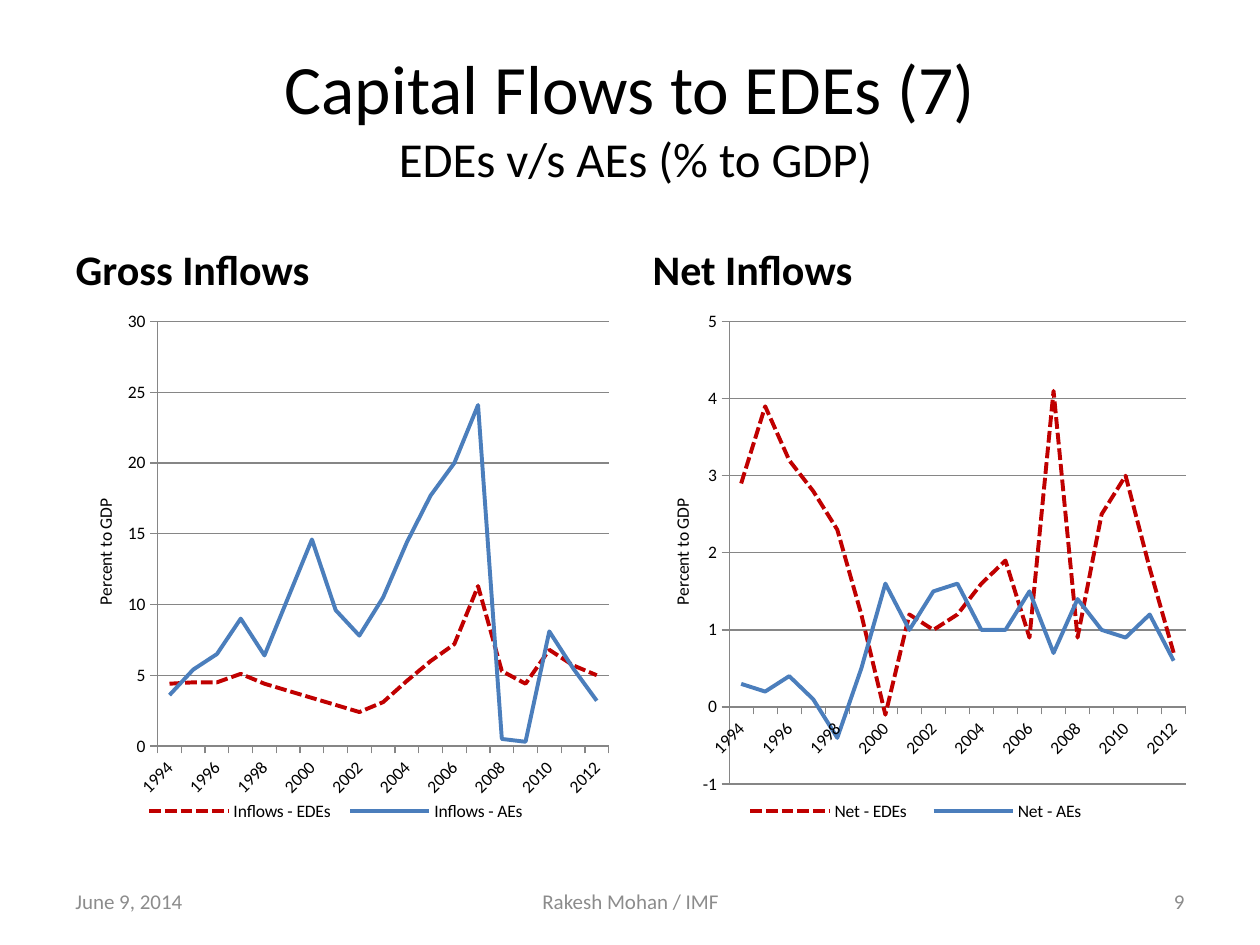
from lxml import etree
from pptx import Presentation
from pptx.chart.data import CategoryChartData
from pptx.dml.color import RGBColor
from pptx.enum.chart import XL_CHART_TYPE, XL_LEGEND_POSITION, XL_TICK_MARK
from pptx.enum.dml import MSO_LINE
from pptx.enum.text import MSO_ANCHOR, PP_ALIGN
from pptx.oxml.ns import qn
from pptx.util import Inches, Pt

LINE = XL_CHART_TYPE.LINE
BOTTOM = XL_LEGEND_POSITION.BOTTOM
OUTSIDE, NO_TICK = XL_TICK_MARK.OUTSIDE, XL_TICK_MARK.NONE
DASH, SOLID = MSO_LINE.SQUARE_DOT, MSO_LINE.SOLID
LOW, MIDDLE = MSO_ANCHOR.BOTTOM, MSO_ANCHOR.MIDDLE
LEFT, CENTER, RIGHT = PP_ALIGN.LEFT, PP_ALIGN.CENTER, PP_ALIGN.RIGHT

FONT = "Calibri"
COLORS = {"text": "000000", "foot": "8C8C8C", "axis": "868686",
          "EDEs": "C00000", "AEs": "4B7EBC"}
DASHES = {"EDEs": DASH, "AEs": SOLID}
YEARS = [str(year) for year in range(1994, 2013)]
COL_W = 4.42

# Each panel: heading, left, axis step and limits, plot box, legend box, series
PANELS = [
    ("Gross Inflows", 0.5, (5, 0, 30), (0.17, 0.04, 0.81, 0.78),
     (0.13, 0.91, 0.72, 0.06), "Inflows", {
         "EDEs": [4.4, 4.5, 4.5, 5.1, 4.4, 3.9, 3.4, 2.9, 2.4, 3.1,
                  4.6, 6, 7.2, 11.3, 5.3, 4.4, 6.8, 5.7, 5],
         "AEs": [3.6, 5.4, 6.5, 9, 6.4, 10.5, 14.6, 9.6, 7.8, 10.5,
                 14.4, 17.7, 20, 24.1, 0.5, 0.3, 8.1, 5.5, 3.2]}),
    ("Net Inflows", 5.08, (1, -1, 5), (0.16, 0.04, 0.82, 0.85),
     (0.16, 0.91, 0.67, 0.06), "Net", {
         "EDEs": [2.9, 3.9, 3.2, 2.8, 2.3, 1.2, -0.1, 1.2, 1, 1.2,
                  1.6, 1.9, 0.9, 4.1, 0.9, 2.5, 3, 1.8, 0.7],
         "AEs": [0.3, 0.2, 0.4, 0.1, -0.4, 0.5, 1.6, 1, 1.5, 1.6,
                 1, 1, 1.5, 0.7, 1.4, 1, 0.9, 1.2, 0.6]}),
]
FOOTERS = [("June 9, 2014", 0.5, 2.33, LEFT),
           ("Rakesh Mohan / IMF", 3.42, 3.17, CENTER),
           ("9", 7.17, 2.33, RIGHT)]


def tint(name):
    return RGBColor.from_string(COLORS[name])


def arrange(node, index, box, inner=False):
    """Give a chart part a manual layout in fractions of the chart."""
    for old in node.findall(qn("c:layout")):
        node.remove(old)
    layout = etree.Element(qn("c:layout"))
    manual = etree.SubElement(layout, qn("c:manualLayout"))
    if inner:
        etree.SubElement(manual, qn("c:layoutTarget"), val="inner")
    for mode in ("xMode", "yMode"):
        etree.SubElement(manual, qn("c:" + mode), val="edge")
    for key, value in zip("xywh", box):
        etree.SubElement(manual, qn("c:" + key), val=str(value))
    node.insert(index, layout)


class Deck:
    def __init__(self):
        self.prs = Presentation()
        self.prs.slide_width, self.prs.slide_height = Inches(10), Inches(7.5)
        self.slide = self.prs.slides.add_slide(self.prs.slide_layouts[4])

    def place(self, shape, box):
        shape.left, shape.top, shape.width, shape.height = map(Inches, box)

    def style(self, font, size, color="text", bold=False):
        font.name, font.size, font.bold = FONT, Pt(size), bold
        font.color.rgb = tint(color)

    def add_text(self, para, text, size, color="text", bold=False):
        run = para.add_run()
        run.text = text
        self.style(run.font, size, color, bold)

    def title(self, box, head, sub):
        shape = self.slide.shapes.title
        self.place(shape, box)
        shape.text_frame.vertical_anchor = MIDDLE
        para = shape.text_frame.paragraphs[0]
        para.alignment = CENTER
        self.add_text(para, head, 39.6)
        para.add_line_break()
        etree.SubElement(para._p.find(qn("a:br")), qn("a:rPr"), sz="3960")
        self.add_text(para, sub, 27.9)

    def heading(self, index, box, text):
        shape = self.slide.placeholders[index]
        self.place(shape, box)
        shape.text_frame.vertical_anchor = LOW
        self.add_text(shape.text_frame.paragraphs[0], text, 24, bold=True)

    def footer(self, text, left, width, align):
        box = map(Inches, (left, 6.95, width, 0.4))
        frame = self.slide.shapes.add_textbox(*box).text_frame
        frame.word_wrap = True
        frame.vertical_anchor = MIDDLE
        para = frame.paragraphs[0]
        para.alignment = align
        self.add_text(para, text, 12, "foot")

    def rule(self, line):
        line.color.rgb = tint("axis")
        line.width = Pt(0.75)

    def chart(self, box, scale, plot, key, prefix, series):
        data = CategoryChartData()
        data.categories = YEARS
        for group, values in series.items():
            data.add_series(f"{prefix} - {group}", values)
        frame = self.slide.shapes.add_chart(LINE, *map(Inches, box), data)
        chart = frame.chart
        chart.has_title = False
        self.style(chart.font, 10)
        for line, group in zip(chart.plots[0].series, series):
            line.smooth = False
            line.format.line.color.rgb = tint(group)
            line.format.line.width = Pt(2.25)
            line.format.line.dash_style = DASHES[group]
        chart.plots[0].vary_by_categories = False
        self.axes(chart, scale)
        chart.has_legend = True
        chart.legend.position = BOTTOM
        chart.legend.include_in_layout = False
        self.style(chart.legend.font, 10)
        arrange(chart.legend._element, 1, key)
        area = chart._chartSpace.chart.plotArea
        arrange(area, 0, plot, inner=True)

    def axes(self, chart, scale):
        years, share = chart.category_axis, chart.value_axis
        for axis in (years, share):
            axis.major_tick_mark, axis.minor_tick_mark = OUTSIDE, NO_TICK
            self.rule(axis.format.line)
            self.style(axis.tick_labels.font, 10)
        body = years._element.find(qn("c:txPr")).find(qn("a:bodyPr"))
        body.set("rot", "-2700000")
        skip = etree.Element(qn("c:tickLblSkip"), val="2")
        years._element.find(qn("c:lblOffset")).addnext(skip)
        share.major_unit, share.minimum_scale, share.maximum_scale = scale
        share.tick_labels.number_format = "#,##0"
        share.tick_labels.number_format_is_linked = False
        share.has_major_gridlines = True
        self.rule(share.major_gridlines.format.line)
        para = share.axis_title.text_frame.paragraphs[0]
        self.add_text(para, "Percent to GDP", 10)
        arrange(share.axis_title._element, 1, (0.05, 0.36))

    def tidy(self):
        """Remove the placeholders that hold no text."""
        for shape in list(self.slide.placeholders):
            if not shape.text_frame.text:
                shape._element.getparent().remove(shape._element)


def main():
    deck = Deck()
    deck.title((0.5, 0.3, 9, 1.25), "Capital Flows to EDEs (7)",
               " EDEs v/s AEs (% to GDP)")
    for index, (head, left, *content) in zip((1, 3), PANELS):
        deck.heading(index, (left, 1.68, COL_W, 0.7), head)
        deck.chart((left, 2.38, COL_W, 4.32), *content)
    for footer in FOOTERS:
        deck.footer(*footer)
    deck.tidy()
    deck.prs.save("out.pptx")


if __name__ == "__main__":
    main()
